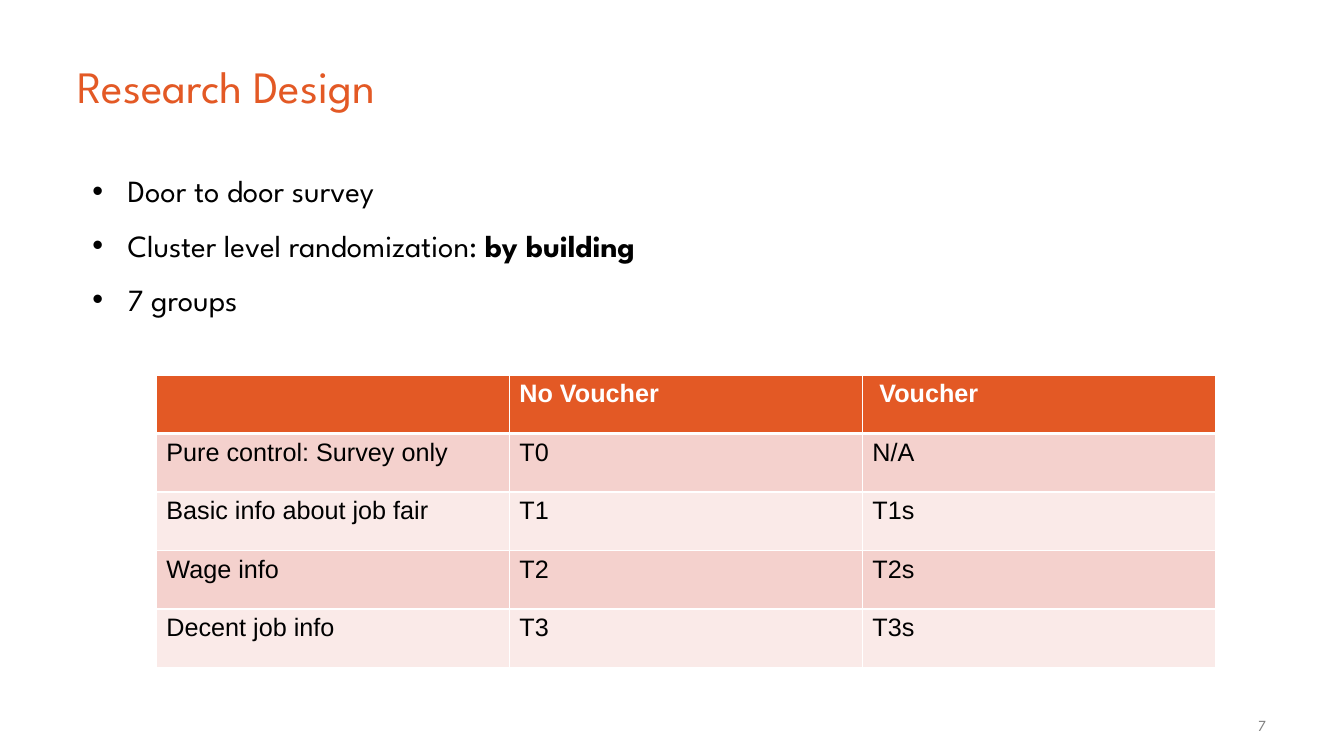
from lxml.etree import SubElement
from pptx import Presentation
from pptx.dml.color import RGBColor
from pptx.enum.text import MSO_ANCHOR as Anchor, PP_ALIGN as Align
from pptx.oxml import parse_xml
from pptx.oxml.ns import nsdecls, qn
from pptx.util import Cm, Pt

ORANGE = RGBColor(0xE3, 0x59, 0x25)
PINK = RGBColor(0xF4, 0xD1, 0xCD)
PALE = RGBColor(0xFA, 0xEA, 0xE8)
WHITE = RGBColor(0xFF, 0xFF, 0xFF)
BLACK = RGBColor(0x00, 0x00, 0x00)
GRAY = RGBColor(0x7F, 0x7F, 0x7F)

BULLETS = [
    [("Door to door survey", False)],
    [("Cluster level randomization: ", False), ("by building", True)],
    [("7 groups", False)],
]
GROUPS = [
    ["", "No Voucher", " Voucher"],
    ["Pure control: Survey only", "T0", "N/A"],
    ["Basic info about job fair", "T1", "T1s"],
    ["Wage info", "T2", "T2s"],
    ["Decent job info", "T3", "T3s"],
]


def apply(target, formats):
    for name, value in formats.items():
        setattr(target, name, value)


class Deck:
    heading_font = "League Spartan"
    table_font = "Arial"

    def __init__(self):
        self.prs = Presentation()
        apply(self.prs, {"slide_width": Cm(33.87), "slide_height": Cm(19.05)})
        self.s = self.prs.slides.add_slide(self.prs.slide_layouts[6])

    def run(self, p, text, size, color, font, bold=False):
        r = p.add_run()
        r.text = text
        apply(r.font, {"name": font, "size": Pt(size), "bold": bold})
        r.font.color.rgb = color

    def frame(self, box, pad=0.25, anchor=Anchor.TOP):
        tf = self.s.shapes.add_textbox(*map(Cm, box)).text_frame
        apply(tf, {
            "word_wrap": True, "vertical_anchor": anchor,
            "margin_left": Cm(0.25), "margin_right": Cm(0.25),
            "margin_top": Cm(pad), "margin_bottom": Cm(pad),
        })
        return tf

    def line(self, box, text, size, color, align=Align.LEFT, **layout):
        p = self.frame(box, **layout).paragraphs[0]
        p.alignment = align
        self.run(p, text, size, color, self.heading_font)

    def bullets(self, box, items, size):
        tf = self.frame(box)
        for i, item in enumerate(items):
            p = tf.add_paragraph() if i else tf.paragraphs[0]
            apply(p, {"space_before": Pt(4.4), "space_after": Pt(8)})
            pPr = p._p.get_or_add_pPr()
            pPr.set("marL", str(Cm(1.27)))
            pPr.set("indent", str(Cm(-0.89)))
            SubElement(pPr, qn("a:buFont")).set("typeface", self.table_font)
            SubElement(pPr, qn("a:buChar")).set("char", "•")
            for text, bold in item:
                self.run(p, text, size, BLACK, self.heading_font, bold)

    def borders(self, cell, widths):
        tcPr = cell._tc.get_or_add_tcPr()
        for i, (side, width) in enumerate(widths.items()):
            tcPr.insert(i, parse_xml(
                f'<a:ln{side} {nsdecls("a")} w="{Pt(width)}"><a:solidFill>'
                f'<a:srgbClr val="{WHITE}"/></a:solidFill></a:ln{side}>'))

    def table(self, box, rows, size):
        shape = self.s.shapes.add_table(len(rows), len(rows[0]), *map(Cm, box))
        for i, row in enumerate(rows):
            header = i == 0
            fill = ORANGE if header else PINK if i % 2 else PALE
            widths = {"L": 1, "R": 1, "T": 3 if i == 1 else 1, "B": 3 if header else 1}
            for j, text in enumerate(row):
                cell = shape.table.cell(i, j)
                cell.fill.solid()
                cell.fill.fore_color.rgb = fill
                self.borders(cell, widths)
                if text:
                    self.run(cell.text_frame.paragraphs[0], text, size,
                             WHITE if header else BLACK, self.table_font, header)


def main():
    deck = Deck()
    deck.bullets((1.7, 4.09, 30.48, 13.08), BULLETS, 22)
    deck.line((1.7, 0.53, 30.48, 3.23), "Research Design", 32, ORANGE, anchor=Anchor.MIDDLE)
    deck.line((29.01, 17.91, 3.15, 0.61), "7", 11, GRAY, Align.RIGHT, pad=0.13)
    deck.table((3.94, 9.45, 26.69, 7.37), GROUPS, 18)
    deck.prs.save("out.pptx")


if __name__ == "__main__":
    main()
